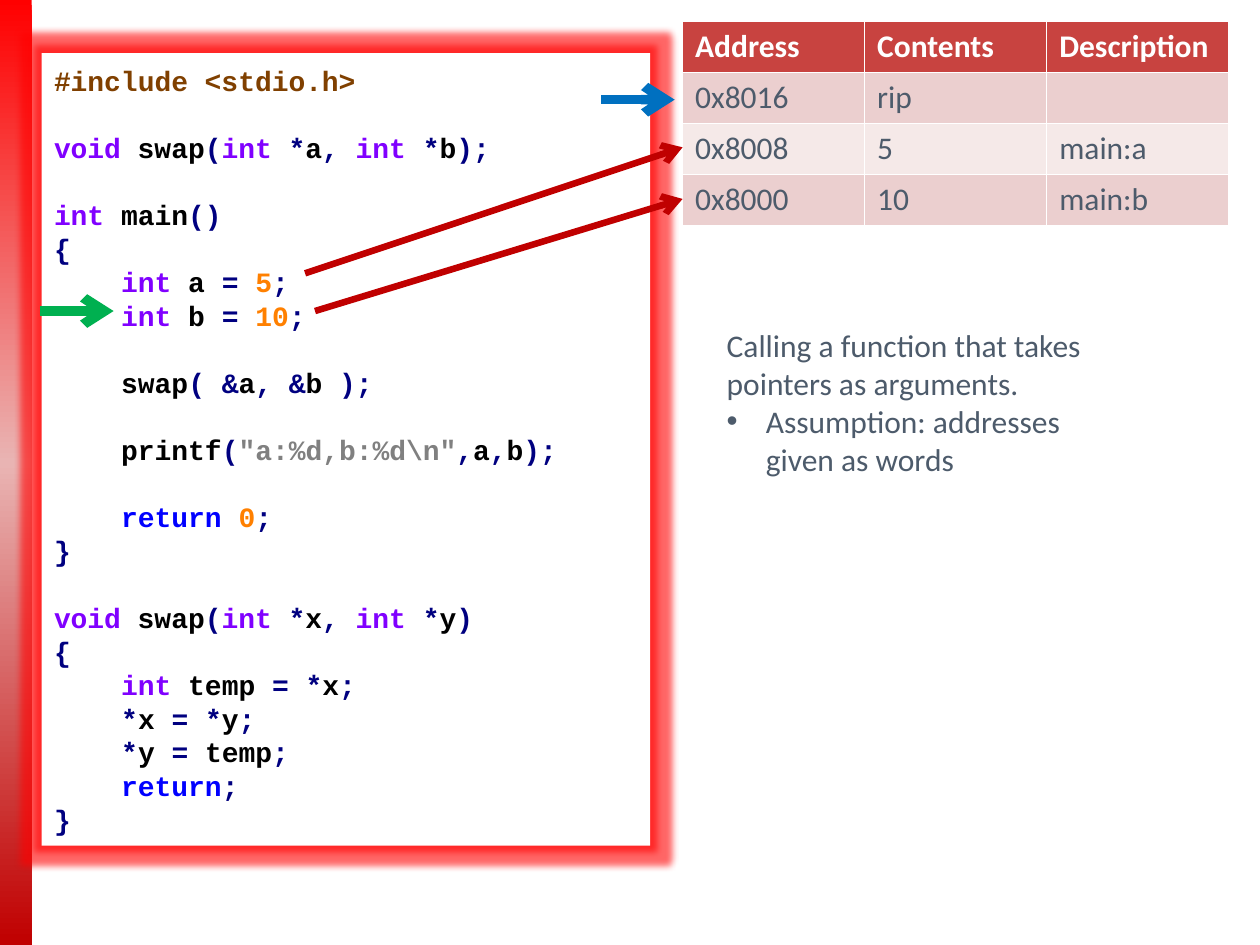
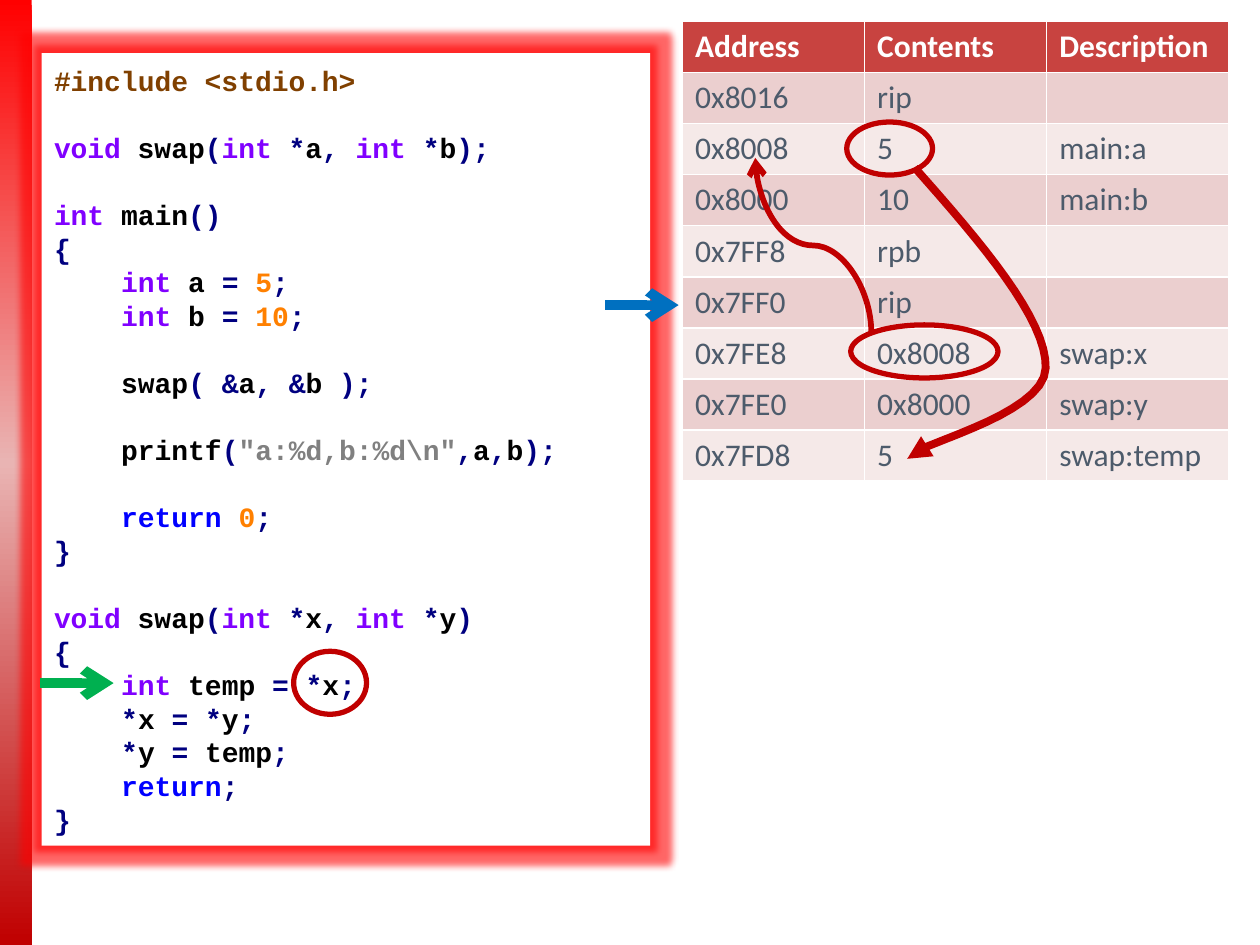
from itertools import groupby
from lxml.etree import SubElement
from pptx import Presentation
from pptx.dml.color import RGBColor
from pptx.enum.shapes import MSO_CONNECTOR, MSO_SHAPE
from pptx.enum.text import MSO_ANCHOR, PP_ALIGN
from pptx.oxml.ns import qn
from pptx.util import Cm, Pt

RED, GREEN, BLUE = "C00000", "00B050", "0070C0"
WHITE, SLATE, HEADER = "FFFFFF", "4D5B6B", "C84340"
ROW_FILLS = ("EBCFCF", "F5E9E8")
BAND_STOPS = [(0, "FF0000"), (49, "E9B4B3"), (100, RED)]

PLAIN, SYMBOL, NUMBER = "000000", "000080", "FF8000"
STRING, DIRECTIVE = "808080", "804000"
KEYWORDS = {"void": "8000FF", "int": "8000FF", "return": "0000FF"}
CODE_SIZE, LINE_PT, CHAR_PT = 16, 19.2, 9.6
CODE = r'''#include <stdio.h>

void swap(int *a, int *b);

int main()
{
    int a = 5;
    int b = 10;

    swap( &a, &b );

    printf("a:%d,b:%d\n",a,b);

    return 0;
}

void swap(int *x, int *y)
{
    int temp = *x;
    *x = *y;
    *y = temp;
    return;
}'''

COLUMNS = ("Address", "Contents", "Description")
MAIN_FRAME = [
    ("0x8016", "rip", ""),
    ("0x8008", "5", "main:a"),
    ("0x8000", "10", "main:b"),
]
SWAP_FRAME = [
    ("0x7FF8", "rpb", ""),
    ("0x7FF0", "rip", ""),
    ("0x7FE8", "0x8008", "swap:x"),
    ("0x7FE0", "0x8000", "swap:y"),
    ("0x7FD8", "5", "swap:temp"),
]
NOTE = ["Calling a function that takes pointers as arguments.",
        "Assumption: addresses given as words"]

TABLE_LEFT, TABLE_TOP, COL_W, ROW_H = 13.76, 0.43, 3.67, 1.03
VARIABLE_ARROWS = [(6.15, 5.51, 13.76, 2.97), (6.35, 6.27, 13.76, 4.01)]
RINGS = [(5.92, 13.13, 1.47, 1.27), (17.15, 6.55, 2.97, 1.07),
         (17.07, 2.46, 1.73, 1.07)]
POINTER_CURVE = (14.63, 6.12, 18.16, 3.78)
COPY_CURVE = [
    [(18.44, 3.38), (19.79, 4.9), (21.11, 6.45), (21.08, 7.42)],
    [(21.08, 7.42), (21.06, 8.41), (18.19, 9.02), (18.29, 9.25)],
]


def rgb(value):
    return RGBColor.from_string(value)


def style(r, size, color, font="Calibri", bold=False):
    r.font.size, r.font.name, r.font.bold = Pt(size), font, bold
    r.font.color.rgb = rgb(color)


def set_line(shape, color, width, head=None):
    shape.line.color.rgb = rgb(color)
    shape.line.width = Pt(width)
    if head:
        SubElement(shape.line._get_or_add_ln(), qn("a:tailEnd"), type=head)


def add_arrow(s, ends, color, width, kind=MSO_CONNECTOR.STRAIGHT):
    c = s.shapes.add_connector(kind, *map(Cm, ends))
    set_line(c, color, width, "arrow")
    SubElement(c.element.spPr, qn("a:effectLst"))
    return c


def add_shape(s, kind, box):
    sp = s.shapes.add_shape(kind, *map(Cm, box))
    sp.shadow.inherit = False
    sp.fill.background()
    sp.line.fill.background()
    return sp


def add_band(s, layout):
    sp = add_shape(s, MSO_SHAPE.RECTANGLE, (0, 0, 0.64, 19.05))
    sp.fill.gradient()
    sp.fill.gradient_angle = 270
    stops = sp.element.spPr.find(".//" + qn("a:gsLst"))
    stops.clear()
    for pos, color in BAND_STOPS:
        gs = SubElement(stops, qn("a:gs"), pos=str(pos * 1000))
        SubElement(gs, qn("a:srgbClr"), val=color)
    layout.shapes.element.append(sp.element)


def color_pieces(line):
    if line.startswith("#"):
        return [(DIRECTIVE, line)]
    marked = []
    for i, part in enumerate(line.split('"')):
        if i % 2:
            marked.append((STRING, f'"{part}"'))
            continue
        for word, chars in groupby(part, key=lambda ch: ch.isalnum()):
            text = "".join(chars)
            if word:
                color = NUMBER if text.isdigit() else KEYWORDS.get(text, PLAIN)
                marked.append((color, text))
            else:
                marked += [(PLAIN if ch == " " else SYMBOL, ch) for ch in text]
    return [(color, "".join(text for _, text in group))
            for color, group in groupby(marked, key=lambda m: m[0])]


def add_code(s):
    sp = add_shape(s, MSO_SHAPE.RECTANGLE, (0.84, 1.07, 12.27, 15.98))
    sp.fill.solid()
    sp.fill.fore_color.rgb = rgb(WHITE)
    effects = sp.element.spPr.find(qn("a:effectLst"))
    glow = SubElement(effects, qn("a:glow"), rad=str(Pt(8)))
    tint = SubElement(glow, qn("a:srgbClr"), val="FF0000")
    SubElement(tint, qn("a:alpha"), val="60000")
    tf = sp.text_frame
    tf.word_wrap = True
    tf.vertical_anchor = MSO_ANCHOR.MIDDLE
    p, gap = tf.paragraphs[0], 0
    for i, line in enumerate(CODE.split("\n")):
        if not line:
            gap = LINE_PT
            continue
        if i:
            p = tf.add_paragraph()
        p.alignment = PP_ALIGN.LEFT
        p.line_spacing, p.space_before = Pt(LINE_PT), Pt(gap)
        gap = 0
        code = line.lstrip()
        indent = Pt((len(line) - len(code)) * CHAR_PT)
        p._p.get_or_add_pPr().set("marL", str(indent))
        for color, text in color_pieces(code):
            r = p.add_run()
            r.text = text
            style(r, CODE_SIZE, color, "Courier New", True)


def add_stack(s, frames):
    rows = [COLUMNS] + frames
    box = (TABLE_LEFT, TABLE_TOP, COL_W * len(COLUMNS), ROW_H * len(rows))
    tbl = s.shapes.add_table(len(rows), len(COLUMNS), *map(Cm, box)).table
    for col in tbl.columns:
        col.width = Cm(COL_W)
    for i, row in enumerate(rows):
        tbl.rows[i].height = Cm(ROW_H)
        for j, text in enumerate(row):
            cell = tbl.cell(i, j)
            cell.fill.solid()
            cell.fill.fore_color.rgb = rgb(ROW_FILLS[(i - 1) % 2] if i else HEADER)
            cell.text = text
            for r in cell.text_frame.paragraphs[0].runs:
                style(r, 18, SLATE if i else WHITE, bold=not i)


def add_note(s):
    tf = s.shapes.add_textbox(*map(Cm, (14.4, 6.45, 8.46, 3.33))).text_frame
    tf.word_wrap = True
    tf.text = "\n".join(NOTE)
    for p in tf.paragraphs:
        style(p.runs[0], 18, SLATE)
    pPr = tf.paragraphs[1]._p.get_or_add_pPr()
    pPr.set("marL", str(Cm(0.79)))
    pPr.set("indent", str(-Cm(0.79)))
    SubElement(pPr, qn("a:buFont"), typeface="Arial")
    SubElement(pPr, qn("a:buChar"), char="•")


def bezier(points, t):
    weights = ((1 - t) ** 3, 3 * t * (1 - t) ** 2, 3 * t ** 2 * (1 - t), t ** 3)
    return tuple(Cm(sum(w * pt[k] for w, pt in zip(weights, points)))
                 for k in (0, 1))


def add_copy_curve(s, steps=16):
    points = [bezier(part, i / steps)
              for part in COPY_CURVE for i in range(1, steps + 1)]
    fb = s.shapes.build_freeform(*map(Cm, COPY_CURVE[0][0]))
    fb.add_line_segments(points, close=False)
    sp = fb.convert_to_shape()
    sp.shadow.inherit = False
    sp.fill.background()
    set_line(sp, RED, 4.5, "triangle")


def add_step(prs, frames, code_y, stack_x, stack_y):
    s = prs.slides.add_slide(prs.slide_layouts[6])
    add_code(s)
    add_stack(s, frames)
    add_arrow(s, (0.81, code_y, 2.29, code_y), GREEN, 5.5)
    add_arrow(s, (stack_x, stack_y, stack_x + 1.48, stack_y), BLUE, 5.5)
    return s


def main():
    prs = Presentation()
    prs.slide_width, prs.slide_height = Cm(25.4), Cm(19.05)

    s = add_step(prs, MAIN_FRAME, 6.27, 12.12, 2.01)
    add_band(s, prs.slide_layouts[6])
    for ends in VARIABLE_ARROWS:
        add_arrow(s, ends, RED, 3.75)
    add_note(s)

    s = add_step(prs, MAIN_FRAME + SWAP_FRAME, 13.77, 12.2, 6.15)
    for box in RINGS:
        set_line(add_shape(s, MSO_SHAPE.OVAL, box), RED, 3)
    pointer = add_arrow(s, POINTER_CURVE, RED, 3.25, MSO_CONNECTOR.CURVE)
    pointer.element.spPr.find(qn("a:xfrm")).set("rot", str(270 * 60000))
    add_copy_curve(s)

    prs.save("out.pptx")


if __name__ == "__main__":
    main()
